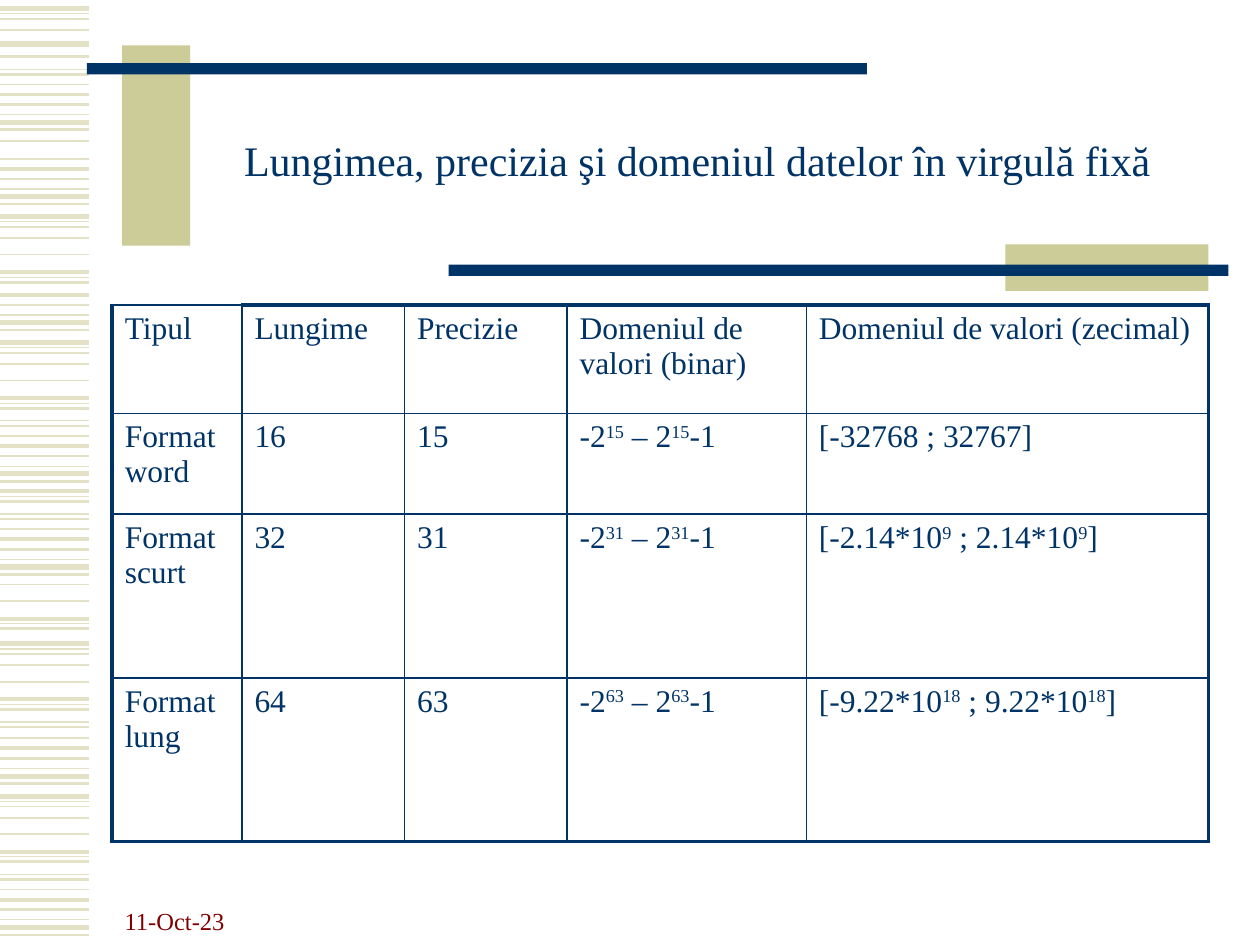
"""Build a slide with a table of fixed-point data formats."""
from dataclasses import dataclass

from lxml import etree
from pptx import Presentation
from pptx.dml.color import RGBColor
from pptx.enum import shapes, text
from pptx.oxml import ns
from pptx.util import Inches, Pt


@dataclass(frozen=True)
class Theme:
    """Colours, font and type sizes of the slide."""
    navy: str = "003366"
    khaki: str = "CCCC99"
    pale: str = "E3E2C7"
    red: str = "800000"
    font: str = "Times New Roman"
    title: int = 24
    body: int = 18
    date: int = 14


THEME = Theme()
RISE = [(0.06, 1.5), (0, 3), (-0.06, 0.75), (-0.14, 1.5), (-0.22, 2.25), (-0.3, 1)]
FALL = [(0, 3), (0.04, 0.75), (0.08, 1), (0.17, 1), (0.3, 1),
        (0.44, 2.25), (0.48, 0.75), (0.52, 1.5), (0.62, 0.75), (0.66, 1.5)]
BANDS = [(y, RISE) for y in (0.97, 1.56, 3.76, 4.5, 6.16, 7.36)]
BANDS += [(y, FALL) for y in (2.72, 5.11, 6.32)]
BANDS += [(2.56, RISE[:5]), (0.07, FALL[:4]), (0.35, FALL[:1]),
          (-0.07, FALL[7:]), (0.82, FALL[4:5]), (1.72, FALL[:8]),
          (3.46, FALL[5:]), (4.47, FALL[3:8])]
BARS = [(0.97, 0.36, 0.54, 1.59, THEME.khaki), (0.69, 0.5, 6.19, 0.09, THEME.navy),
        (7.98, 1.94, 1.61, 0.37, THEME.khaki), (3.56, 2.1, 6.19, 0.09, THEME.navy)]
COLS = [1.03, 1.29, 1.29, 1.9, 3.19]
ROWS = [0.86, 0.8, 1.3, 1.3]
CELLS = [
    ["Tipul", "Lungime", "Precizie", "Domeniul de valori (binar)",
     "Domeniul de valori (zecimal)"],
    ["Format word", "16", "15", "-2^15^ – 2^15^-1", "[-32768 ; 32767]"],
    ["Format scurt", "32", "31", "-2^31^ – 2^31^-1", "[-2.14*10^9^ ; 2.14*10^9^]"],
    ["Format lung", "64", "63", "-2^63^ – 2^63^-1", "[-9.22*10^18^ ; 9.22*10^18^]"],
]


def style(para, size, color):
    """Set the font of a paragraph."""
    font = para.font
    font.name, font.size = THEME.font, Pt(size)
    font.color.rgb = RGBColor.from_string(color)


def add_stripe(slide, y, weight):
    """Draw one pale line at the left edge."""
    line = slide.shapes.add_connector(
        shapes.MSO_CONNECTOR.STRAIGHT, 0, Inches(y), Inches(0.71), Inches(y))
    line.line.color.rgb = RGBColor.from_string(THEME.pale)
    line.line.width = Pt(weight)
    etree.SubElement(line._element.spPr, ns.qn("a:effectLst"))


def add_bar(slide, x, y, w, h, color):
    """Draw a plain filled bar."""
    bar = slide.shapes.add_shape(
        shapes.MSO_SHAPE.RECTANGLE, Inches(x), Inches(y), Inches(w), Inches(h))
    bar.shadow.inherit = False
    bar.fill.solid()
    bar.fill.fore_color.rgb = RGBColor.from_string(color)
    bar.line.fill.background()


def add_label(slide, x, y, w, h, words, size, color, anchor):
    """Add a text box and return its paragraph."""
    frame = slide.shapes.add_textbox(
        Inches(x), Inches(y), Inches(w), Inches(h)).text_frame
    frame.word_wrap = True
    frame.vertical_anchor = anchor
    para = frame.paragraphs[0]
    para.text = words
    style(para, size, color)
    return para


def add_edge(cell, side, weight):
    """Draw one border of a cell."""
    edge = etree.SubElement(cell._tc.get_or_add_tcPr(), ns.qn(f"a:ln{side}"),
                            w=str(Pt(weight)))
    fill = etree.SubElement(edge, ns.qn("a:solidFill"))
    etree.SubElement(fill, ns.qn("a:srgbClr"), val=THEME.navy)


def fill_cell(cell, words):
    """Write text in a cell, raising the parts between carets."""
    para = cell.text_frame.paragraphs[0]
    style(para, THEME.body, THEME.navy)
    for i, part in enumerate(words.split("^")):
        run = para.add_run()
        run.text = part
        if i % 2:
            run._r.get_or_add_rPr().set("baseline", "30000")


def add_grid(slide):
    """Add the table with a heavy outer frame."""
    grid = slide.shapes.add_table(
        len(ROWS), len(COLS), Inches(0.89), Inches(2.42),
        Inches(sum(COLS)), Inches(sum(ROWS))).table
    grid.first_row = grid.horz_banding = False
    for col, width in zip(grid.columns, COLS):
        col.width = Inches(width)
    for row, height in zip(grid.rows, ROWS):
        row.height = Inches(height)
    for r, line in enumerate(CELLS):
        for c, words in enumerate(line):
            cell = grid.cell(r, c)
            heavy = {"L": c == 0, "R": c == len(COLS) - 1,
                     "T": r == 0 and c > 0, "B": r == len(ROWS) - 1}
            for side, thick in heavy.items():
                add_edge(cell, side, 2.25 if thick else 1)
            cell.fill.background()
            fill_cell(cell, words)


def main():
    """Build and save the slide."""
    deck = Presentation()
    deck.slide_width, deck.slide_height = Inches(10), Inches(7.5)
    slide = deck.slides.add_slide(deck.slide_layouts[6])
    for base, band in BANDS:
        for step, weight in band:
            add_stripe(slide, base + step, weight)
    for bar in BARS:
        add_bar(slide, *bar)
    add_label(slide, 0.89, 6.97, 2.08, 0.5, "11-Oct-23", THEME.date, THEME.red,
              text.MSO_ANCHOR.BOTTOM)
    title = add_label(slide, 1.5, 0.67, 8.07, 1.25,
                      "Lungimea, precizia şi domeniul datelor în virgulă fixă",
                      THEME.title, THEME.navy, text.MSO_ANCHOR.MIDDLE)
    title.alignment = text.PP_ALIGN.CENTER
    title.line_spacing = 0.85
    add_grid(slide)
    deck.save("out.pptx")


if __name__ == "__main__":
    main()
